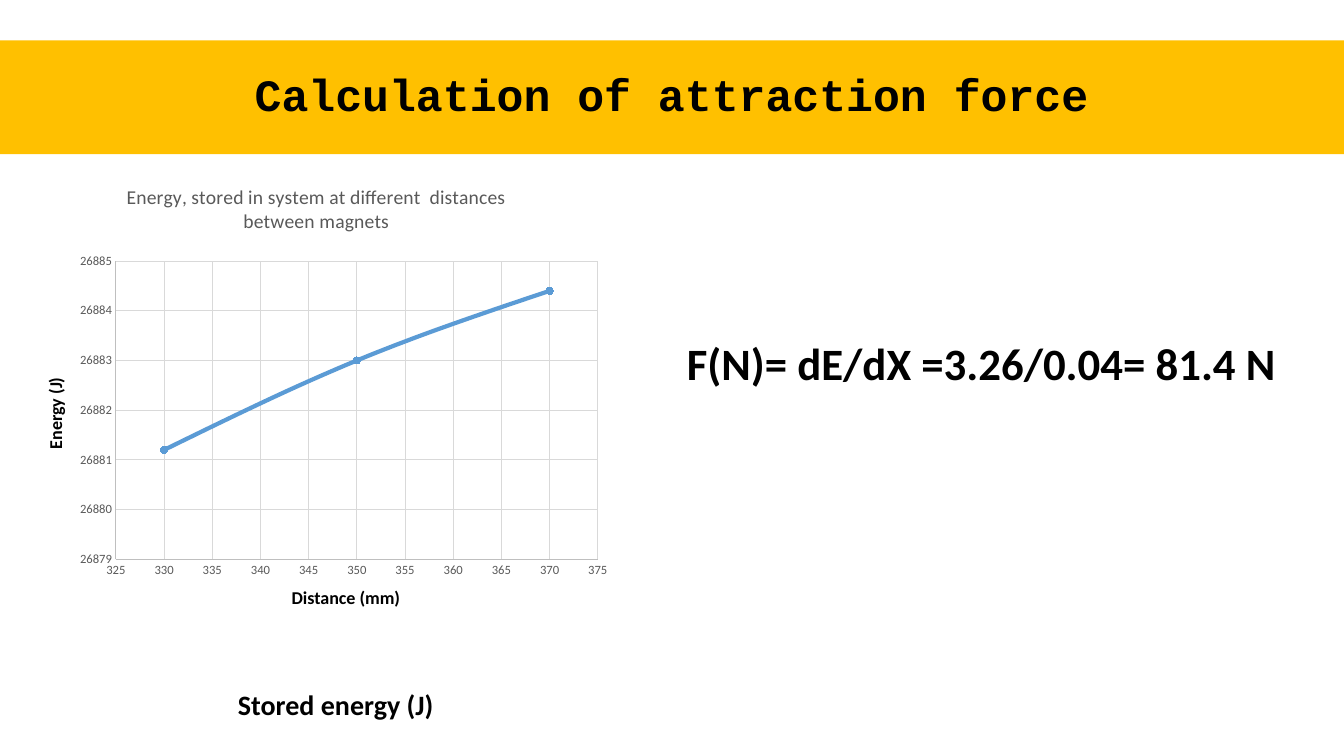
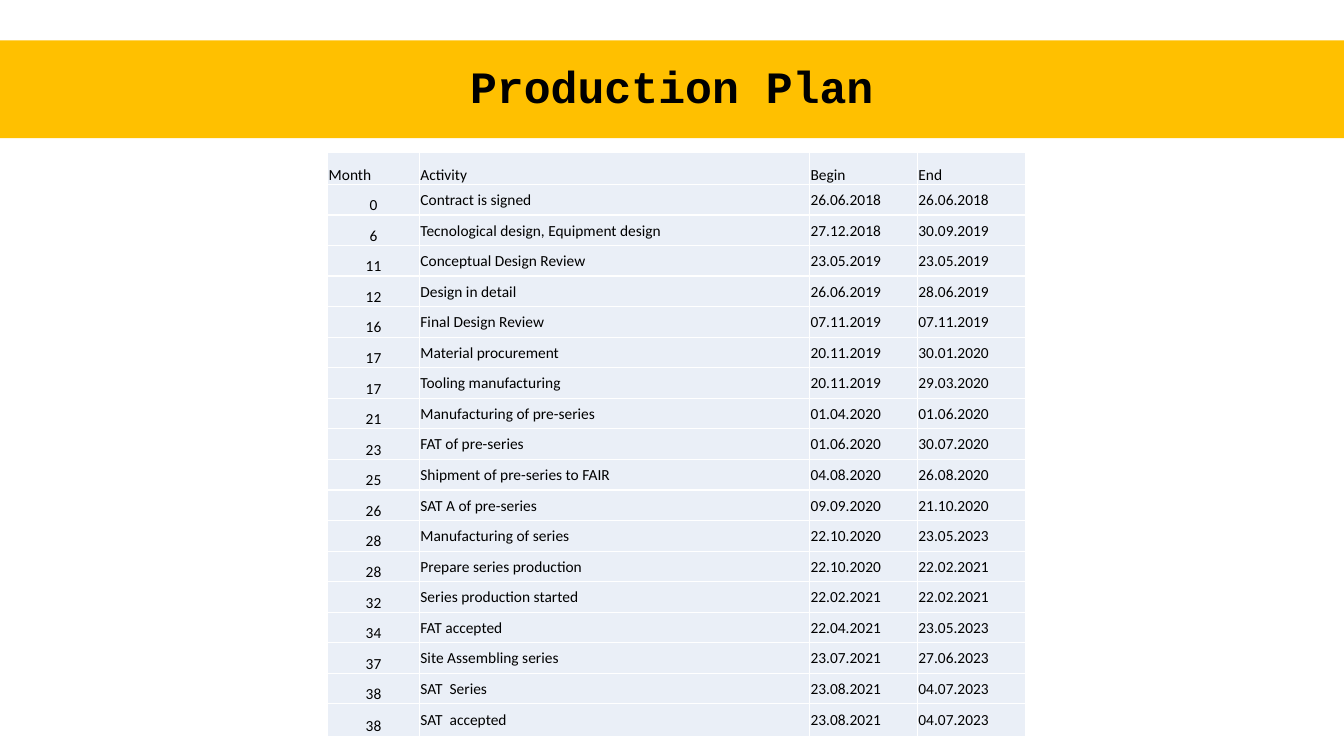
from lxml import etree
from pptx import Presentation
from pptx.chart.data import XyChartData
from pptx.dml.color import RGBColor
from pptx.enum import chart as chart_enum, shapes, text
from pptx.oxml import ns, parse_xml
from pptx.util import Inches, Pt

AMBER = RGBColor(0xFF, 0xC0, 0x00)
BLACK = RGBColor(0x00, 0x00, 0x00)
BLUE = RGBColor(0x5B, 0x9B, 0xD5)
PALE_BLUE = RGBColor(0xEA, 0xEF, 0xF7)
DARK_GREY = RGBColor(0x59, 0x59, 0x59)
AXIS_GREY = RGBColor(0xBF, 0xBF, 0xBF)
GRID_GREY = RGBColor(0xD9, 0xD9, 0xD9)

BODY_FONT = "Calibri"
SLIDE_WIDTH = 13.33
TITLES = [("Calculation of attraction force", 1.13), ("Production Plan", 0.97)]
LABELS = [
    # text, left, top, width, height, size, line spacing, rotation
    ("Stored energy (J)", 1.59, 6.8, 3.48, 0.41, 20, 0.9, 0),
    ("F(N)= dE/dX =3.26/0.04= 81.4 N", 6.14, 2.41, 7.19, 1.51, 32, 0.9, 0),
    ("Distance (mm)", 1.69, 5.82, 3.48, 0.26, 12.9, 0.7, 0),
    ("Energy (J)", -0.17, 3.97, 1.47, 0.26, 12.9, 0.7, 270),
]
CHART_WIDTH, CHART_HEIGHT = 5.45, 4.1
ENERGY_POINTS = [(330, 26881.2), (350, 26883), (370, 26884.4)]
PLAN = [
    ("Month", "Activity", "Begin", "End"),
    ("0", "Contract is signed", "26.06.2018", "26.06.2018"),
    ("6", "Tecnological design, Equipment design", "27.12.2018", "30.09.2019"),
    ("11", "Conceptual Design Review", "23.05.2019", "23.05.2019"),
    ("12", "Design in detail", "26.06.2019", "28.06.2019"),
    ("16", "Final Design Review", "07.11.2019", "07.11.2019"),
    ("17", "Material procurement", "20.11.2019", "30.01.2020"),
    ("17", "Tooling manufacturing", "20.11.2019", "29.03.2020"),
    ("21", "Manufacturing of pre-series", "01.04.2020", "01.06.2020"),
    ("23", "FAT of pre-series", "01.06.2020", "30.07.2020"),
    ("25", "Shipment of pre-series to FAIR", "04.08.2020", "26.08.2020"),
    ("26", "SAT A of pre-series", "09.09.2020", "21.10.2020"),
    ("28", "Manufacturing of series", "22.10.2020", "23.05.2023"),
    ("28", "Prepare series production", "22.10.2020", "22.02.2021"),
    ("32", "Series production started", "22.02.2021", "22.02.2021"),
    ("34", "FAT accepted", "22.04.2021", "23.05.2023"),
    ("37", "Site Assembling series", "23.07.2021", "27.06.2023"),
    ("38", "SAT  Series", "23.08.2021", "04.07.2023"),
    ("38", "SAT  accepted", "23.08.2021", "04.07.2023"),
]
COLUMN_WIDTHS = [0.91, 3.87, 1.07, 1.07]
TABLE_HEIGHT, END_ROW_HEIGHT = 5.8, 0.32


def write(frame, content, size, font_name=BODY_FONT, bold=True, color=BLACK,
          align=text.PP_ALIGN.CENTER, spacing=None):
    """Put one formatted paragraph into a text frame."""
    frame.text = content
    paragraph = frame.paragraphs[0]
    paragraph.alignment = align
    paragraph.line_spacing = spacing
    font = paragraph.runs[0].font
    formats = {"size": Pt(size), "name": font_name, "bold": bold}
    for name, value in formats.items():
        setattr(font, name, value)
    font.color.rgb = color


def place(element, after, **inches):
    """Fix the place of a chart part, in inches within the chart."""
    for layout in element.findall(ns.qn("c:layout")):
        element.remove(layout)
    layout = etree.Element(ns.qn("c:layout"))
    manual = etree.SubElement(layout, ns.qn("c:manualLayout"))
    if "w" in inches:
        etree.SubElement(manual, ns.qn("c:layoutTarget"), val="inner")
    for axis in "xy":
        etree.SubElement(manual, ns.qn(f"c:{axis}Mode"), val="edge")
    for name, value in inches.items():
        whole = CHART_WIDTH if name in "xw" else CHART_HEIGHT
        etree.SubElement(manual, ns.qn(f"c:{name}"), val=str(value / whole))
    previous = element.find(ns.qn(after)) if after else None
    element.insert(0 if previous is None else element.index(previous) + 1, layout)


presentation = Presentation()
presentation.slide_width = Inches(SLIDE_WIDTH)
presentation.slide_height = Inches(7.5)

# Title bands
slides = []
for title, band_height in TITLES:
    slide = presentation.slides.add_slide(presentation.slide_layouts[6])
    band = slide.shapes.add_shape(shapes.MSO_SHAPE.RECTANGLE, 0, Inches(0.4),
                                  Inches(SLIDE_WIDTH), Inches(band_height))
    band.shadow.inherit = False
    band.fill.solid()
    band.fill.fore_color.rgb = AMBER
    band.line.fill.background()
    band.text_frame.vertical_anchor = text.MSO_ANCHOR.MIDDLE
    write(band.text_frame, title, 32, "Courier New", spacing=0.9)
    slides.append(slide)
force_slide, plan_slide = slides

# Energy chart
chart_data = XyChartData()
energy = chart_data.add_series("Series 1")
for distance, joules in ENERGY_POINTS:
    energy.add_data_point(distance, joules)
chart = force_slide.shapes.add_chart(
    chart_enum.XL_CHART_TYPE.XY_SCATTER_SMOOTH, Inches(0.69), Inches(1.72),
    Inches(CHART_WIDTH), Inches(CHART_HEIGHT), chart_data).chart
chart.has_legend = False
chart.font.name = BODY_FONT
chart.font.size = Pt(10)
write(chart.chart_title.text_frame,
      "Energy, stored in system at different  distances between magnets",
      14, bold=False, color=DARK_GREY)
place(chart.chart_title._element, "c:tx", x=0.53, y=0.06)
place(chart.plots[0]._element.getparent(), None, x=0.46, y=0.87, w=4.78, h=2.96)

axes = [(chart.category_axis, 325, 375, 5), (chart.value_axis, 26879, 26885, 1)]
for axis, low, high, step in axes:
    formats = {"minimum_scale": low, "maximum_scale": high, "major_unit": step,
               "has_major_gridlines": True,
               "major_tick_mark": chart_enum.XL_TICK_MARK.NONE,
               "minor_tick_mark": chart_enum.XL_TICK_MARK.NONE}
    for name, value in formats.items():
        setattr(axis, name, value)
    axis.tick_labels.number_format = "General"
    axis.tick_labels.number_format_is_linked = False
    axis.tick_labels.font.size = Pt(9)
    axis.tick_labels.font.color.rgb = DARK_GREY
    for line, color in [(axis.format.line, AXIS_GREY),
                        (axis.major_gridlines.format.line, GRID_GREY)]:
        line.color.rgb = color
        line.width = Pt(0.75)

chart.plots[0].vary_by_categories = False
curve = chart.plots[0].series[0]
curve.format.line.color.rgb = BLUE
curve.format.line.width = Pt(3)
curve.marker.style = chart_enum.XL_MARKER_STYLE.CIRCLE
curve.marker.size = 5
curve.marker.format.fill.solid()
curve.marker.format.fill.fore_color.rgb = BLUE
curve.marker.format.line.color.rgb = BLUE
# A scatter series has no public smooth property
for smooth in curve._element.findall(ns.qn("c:smooth")):
    curve._element.remove(smooth)
etree.SubElement(curve._element, ns.qn("c:smooth"), val="1")

# Axis captions and the result
for content, left, top, width, height, size, spacing, rotation in LABELS:
    label = force_slide.shapes.add_textbox(Inches(left), Inches(top),
                                           Inches(width), Inches(height))
    label.rotation = rotation
    label.text_frame.word_wrap = True
    label.text_frame.vertical_anchor = text.MSO_ANCHOR.BOTTOM
    write(label.text_frame, content, size, spacing=spacing)

# Production plan
table = plan_slide.shapes.add_table(
    len(PLAN), len(COLUMN_WIDTHS), Inches(3.25), Inches(1.51),
    Inches(sum(COLUMN_WIDTHS)), Inches(TABLE_HEIGHT)).table
table.first_row = table.horz_banding = False
for column, width in zip(table.columns, COLUMN_WIDTHS):
    column.width = Inches(width)
inner_height = (TABLE_HEIGHT - 2 * END_ROW_HEIGHT) / (len(PLAN) - 2)
for row_index, values in enumerate(PLAN):
    is_end = row_index in (0, len(PLAN) - 1)
    table.rows[row_index].height = Inches(END_ROW_HEIGHT if is_end else inner_height)
    for column_index, value in enumerate(values):
        cell = table.cell(row_index, column_index)
        if row_index == 0:
            align, anchor = text.PP_ALIGN.LEFT, text.MSO_ANCHOR.BOTTOM
        elif column_index == 0:
            align, anchor = text.PP_ALIGN.CENTER, text.MSO_ANCHOR.BOTTOM
        else:
            align, anchor = text.PP_ALIGN.JUSTIFY, text.MSO_ANCHOR.MIDDLE
        write(cell.text_frame, value, 11, bold=False, align=align)
        formats = {"vertical_anchor": anchor, "margin_left": Inches(0.01),
                   "margin_right": Inches(0.01), "margin_top": Inches(0.01),
                   "margin_bottom": 0}
        for name, setting in formats.items():
            setattr(cell, name, setting)
        properties = cell._tc.get_or_add_tcPr()
        for side in "LRTB":
            properties.append(parse_xml(
                f'<a:ln{side} {ns.nsdecls("a")} w="12700"><a:solidFill>'
                f'<a:srgbClr val="FFFFFF"/></a:solidFill></a:ln{side}>'))
        cell.fill.solid()
        cell.fill.fore_color.rgb = PALE_BLUE

presentation.save("out.pptx")
